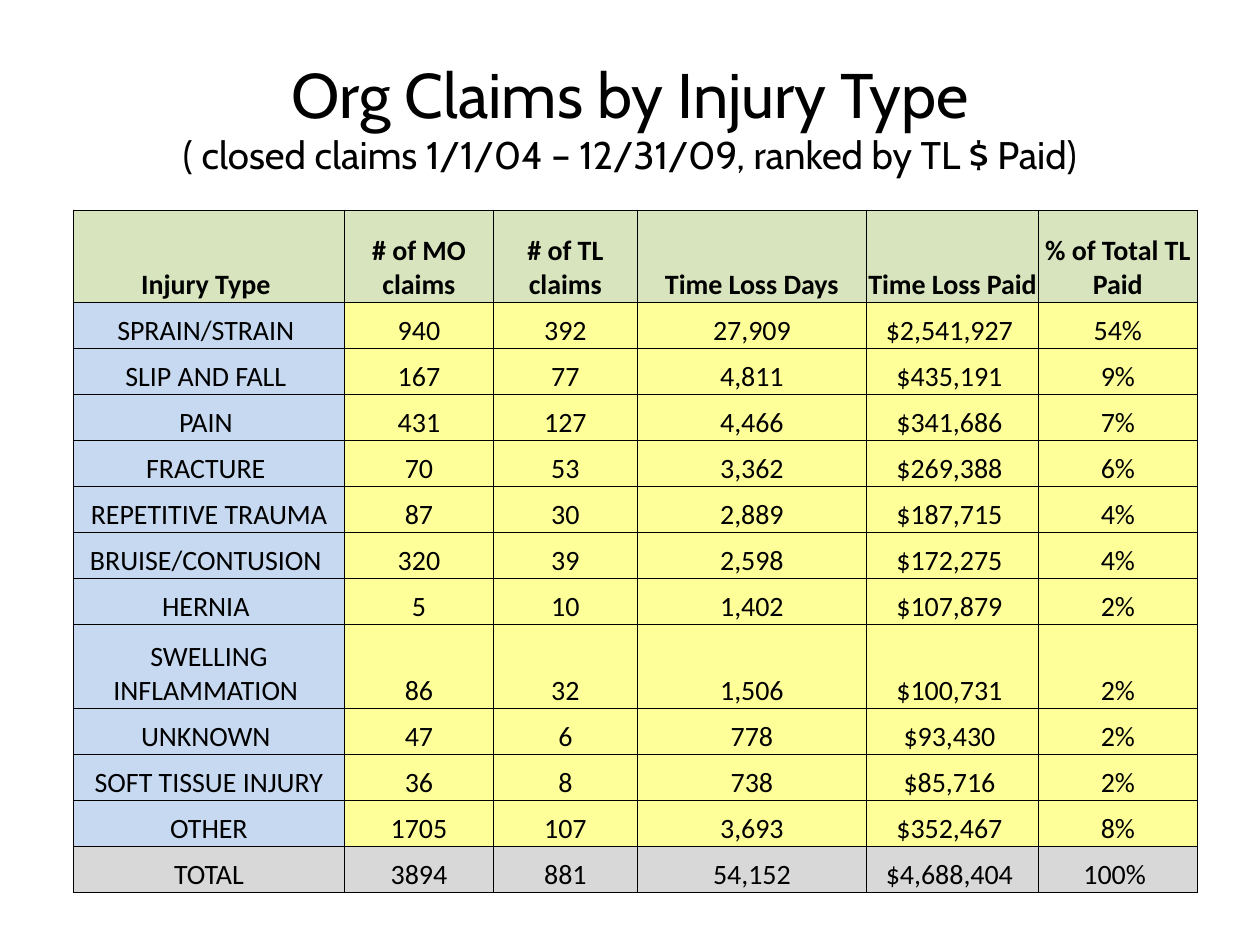
from lxml import etree
from pptx import Presentation
from pptx.dml.color import RGBColor
from pptx.enum import text
from pptx.oxml import ns
from pptx.util import Pt

BLACK = RGBColor(0x00, 0x00, 0x00)
GREEN = RGBColor(0xD7, 0xE4, 0xBD)
BLUE = RGBColor(0xC6, 0xD9, 0xF1)
YELLOW = RGBColor(0xFF, 0xFF, 0x99)
GREY = RGBColor(0xD8, 0xD8, 0xD8)

ROWS = [
    ("Injury Type ", "# of MO claims", "# of TL claims", "Time Loss Days", "Time Loss Paid", "% of Total TL Paid"),
    ("SPRAIN/STRAIN ", "940", "392", "27,909", "$2,541,927 ", "54%"),
    ("SLIP AND FALL ", "167", "77", "4,811", "$435,191 ", "9%"),
    ("PAIN ", "431", "127", "4,466", "$341,686 ", "7%"),
    ("FRACTURE ", "70", "53", "3,362", "$269,388 ", "6%"),
    ("REPETITIVE TRAUMA", "87", "30", "2,889", "$187,715 ", "4%"),
    ("BRUISE/CONTUSION ", "320", "39", "2,598", "$172,275 ", "4%"),
    ("HERNIA ", "5", "10", "1,402", "$107,879 ", "2%"),
    ("SWELLING\nINFLAMMATION ", "86", "32", "1,506", "$100,731 ", "2%"),
    ("UNKNOWN ", "47", "6", "778", "$93,430 ", "2%"),
    ("SOFT TISSUE INJURY", "36", "8", "738", "$85,716 ", "2%"),
    ("OTHER", "1705", "107", "3,693", "$352,467 ", "8%"),
    ("TOTAL", "3894", "881", "54,152", "$4,688,404 ", "100% "),
]
COL_WIDTHS = [154.8, 85.2, 82.2, 131, 98.4, 90.4]
ROW_HEIGHT = 26.3
TALL_ROWS = {0: 52.6, 8: 48.2}
LAST = len(ROWS) - 1


def add_borders(cell):
    tcPr = cell._tc.get_or_add_tcPr()
    for i, side in enumerate(("lnL", "lnR", "lnT", "lnB")):
        ln = etree.Element(ns.qn(f"a:{side}"), w=str(Pt(0.5)))
        fill = etree.SubElement(ln, ns.qn("a:solidFill"))
        etree.SubElement(fill, ns.qn("a:srgbClr"), val=str(BLACK))
        tcPr.insert(i, ln)


prs = Presentation()
prs.slide_width, prs.slide_height = Pt(720), Pt(540)
s = prs.slides.add_slide(prs.slide_layouts[6])

sp = s.shapes.add_textbox(Pt(36), Pt(21.6), Pt(648), Pt(90))
tf = sp.text_frame
tf.word_wrap = True
tf.vertical_anchor = text.MSO_ANCHOR.MIDDLE
p = tf.paragraphs[0]
p.alignment = text.PP_ALIGN.CENTER
p.text = " Org Claims by Injury Type \v( closed claims 1/1/04 – 12/31/09, ranked by TL $ Paid)"
p.font.name = "Cabin"
p.font.color.rgb = BLACK
for r, size in zip(p.runs, (36, 22)):
    r.font.size = Pt(size)

heights = [TALL_ROWS.get(i, ROW_HEIGHT) for i in range(len(ROWS))]
sp = s.shapes.add_table(len(ROWS), len(COL_WIDTHS), Pt(42), Pt(120),
                        Pt(sum(COL_WIDTHS)), Pt(sum(heights)))
table = sp.table
table.first_row = table.horz_banding = False
for col, width in zip(table.columns, COL_WIDTHS):
    col.width = Pt(width)

for i, (row, height, values) in enumerate(zip(table.rows, heights, ROWS)):
    row.height = Pt(height)
    for j, (cell, value) in enumerate(zip(row.cells, values)):
        cell.text = value
        cell.vertical_anchor = text.MSO_ANCHOR.BOTTOM
        cell.margin_left = cell.margin_right = cell.margin_top = cell.margin_bottom = 0
        cell.fill.solid()
        if i == 0:
            color = GREEN
        elif i == LAST:
            color = GREY
        else:
            color = BLUE if j == 0 else YELLOW
        cell.fill.fore_color.rgb = color
        add_borders(cell)
        for p in cell.text_frame.paragraphs:
            p.alignment = text.PP_ALIGN.CENTER
            p.font.name = "Calibri"
            p.font.size = Pt(16)
            p.font.bold = i == 0
            p.font.color.rgb = BLACK

prs.save("out.pptx")
